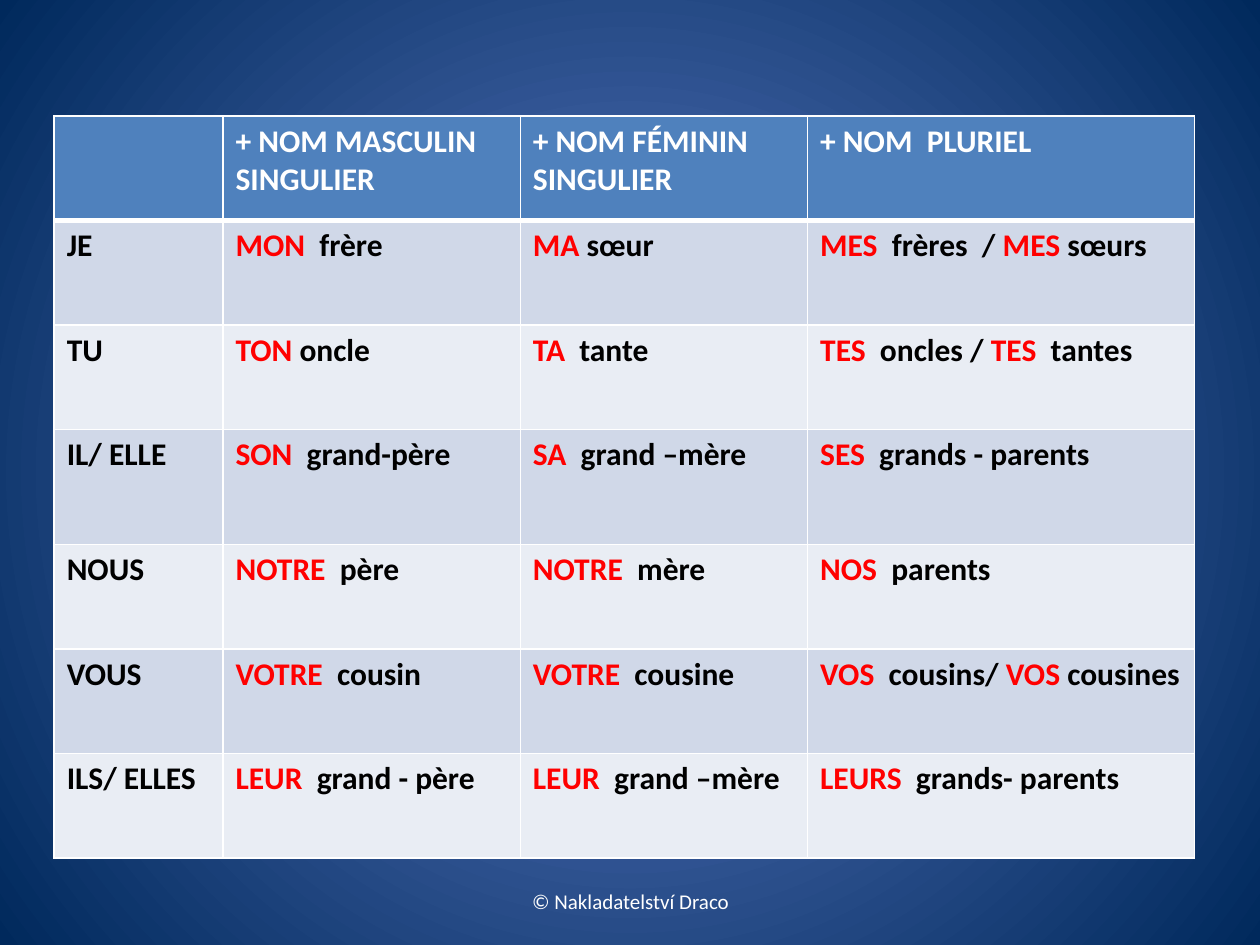
from lxml.etree import SubElement
from pptx import Presentation
from pptx.dml.color import RGBColor
from pptx.enum.text import MSO_ANCHOR, PP_ALIGN
from pptx.oxml import parse_xml
from pptx.oxml.ns import nsdecls, qn
from pptx.util import Inches, Pt

THEME = {
    "font": "Calibri", "table_size": 18, "footer_size": 12,
    "center": "5E7CC5", "edge": "00295C",
    "header": "4F81BD", "bands": ("D0D8E8", "E9EDF4"),
    "white": "FFFFFF", "text": "000000", "possessive": "FF0000",
}

HEADERS = ["", "+ NOM MASCULIN SINGULIER", "+ NOM FÉMININ  SINGULIER", "+ NOM  PLURIEL"]
# In the example columns, "|" separates possessive and noun in turn
ROWS = [
    ("JE", "MON |\u0020frère", "MA |sœur", "MES|  frères  / |MES |sœurs"),
    ("TU", "TON |oncle", "TA|  tante", "TES | oncles / |TES|  tantes"),
    ("IL/ ELLE", "SON|  grand-père", "SA  |grand –mère", "SES | grands - parents"),
    ("NOUS", "NOTRE|  père", "NOTRE | mère", "NOS  |parents"),
    ("VOUS", "VOTRE | cousin", "VOTRE  |cousine", "VOS  |cousins/ |VOS| cousines"),
    ("ILS/ ELLES", "LEUR|  grand - père", "LEUR  |grand –mère", "LEURS  |grands- parents"),
]
FOOTER = "© Nakladatelství Draco"
COLUMN_WIDTHS = [1.34, 2.36, 2.28, 3.07]
ROW_HEIGHTS = [0.83, 0.83, 0.83, 0.91, 0.83, 0.83, 0.83]


def add_run(paragraph, text, size, color, bold=False):
    run = paragraph.add_run()
    run.text = text
    run.font.name = THEME["font"]
    run.font.size = Pt(size)
    run.font.bold = bold
    run.font.color.rgb = RGBColor.from_string(color)


def set_borders(cell, top, bottom):
    properties = cell._tc.get_or_add_tcPr()
    for side, width in (("L", 1), ("R", 1), ("T", top), ("B", bottom)):
        line = SubElement(properties, qn(f"a:ln{side}"), w=str(Pt(width)))
        fill = SubElement(line, qn("a:solidFill"))
        SubElement(fill, qn("a:srgbClr"), val=THEME["white"])


def set_background(slide):
    stops = "".join(
        f'<a:gs pos="{position}"><a:srgbClr val="{color}"/></a:gs>'
        for position, color in ((0, THEME["center"]), (100000, THEME["edge"])))
    background = parse_xml(
        f'<p:bg {nsdecls("p", "a")}><p:bgPr><a:gradFill><a:gsLst>{stops}</a:gsLst>'
        '<a:path path="circle"><a:fillToRect l="50000" t="50000" r="50000" b="50000"/>'
        '</a:path></a:gradFill><a:effectLst/></p:bgPr></p:bg>')
    slide._element.cSld.insert(0, background)


def add_possessive_table(slide):
    content = [HEADERS, *ROWS]
    table = slide.shapes.add_table(
        len(content), len(HEADERS), Inches(0.43), Inches(0.92),
        Inches(sum(COLUMN_WIDTHS)), Inches(sum(ROW_HEIGHTS))).table
    table.first_row = table.horz_banding = False
    for column, width in zip(table.columns, COLUMN_WIDTHS):
        column.width = Inches(width)
    for row, height in zip(table.rows, ROW_HEIGHTS):
        row.height = Inches(height)

    for row_index, texts in enumerate(content):
        is_header = row_index == 0
        fill_color = THEME["header"] if is_header else THEME["bands"][(row_index - 1) % 2]
        for column_index, text in enumerate(texts):
            cell = table.cell(row_index, column_index)
            set_borders(cell, top=3 if row_index == 1 else 1, bottom=3 if is_header else 1)
            cell.fill.solid()
            cell.fill.fore_color.rgb = RGBColor.from_string(fill_color)
            if not text:
                continue
            if is_header:
                colors = [THEME["white"]]
            elif column_index == 0:
                colors = [THEME["text"]]
            else:
                colors = [THEME["possessive"], THEME["text"]]
            for part_index, part in enumerate(text.split("|")):
                add_run(cell.text_frame.paragraphs[0], part, THEME["table_size"],
                        colors[part_index % len(colors)], bold=True)


def add_footer(slide):
    box = slide.shapes.add_textbox(Inches(3.42), Inches(6.95), Inches(3.17), Inches(0.4))
    box.text_frame.word_wrap = True
    box.text_frame.vertical_anchor = MSO_ANCHOR.MIDDLE
    paragraph = box.text_frame.paragraphs[0]
    paragraph.alignment = PP_ALIGN.CENTER
    add_run(paragraph, FOOTER, THEME["footer_size"], THEME["white"])


def main():
    presentation = Presentation()
    presentation.slide_width, presentation.slide_height = Inches(10), Inches(7.5)
    slide = presentation.slides.add_slide(presentation.slide_layouts[6])
    set_background(slide)
    add_possessive_table(slide)
    add_footer(slide)
    presentation.save("out.pptx")


if __name__ == "__main__":
    main()
